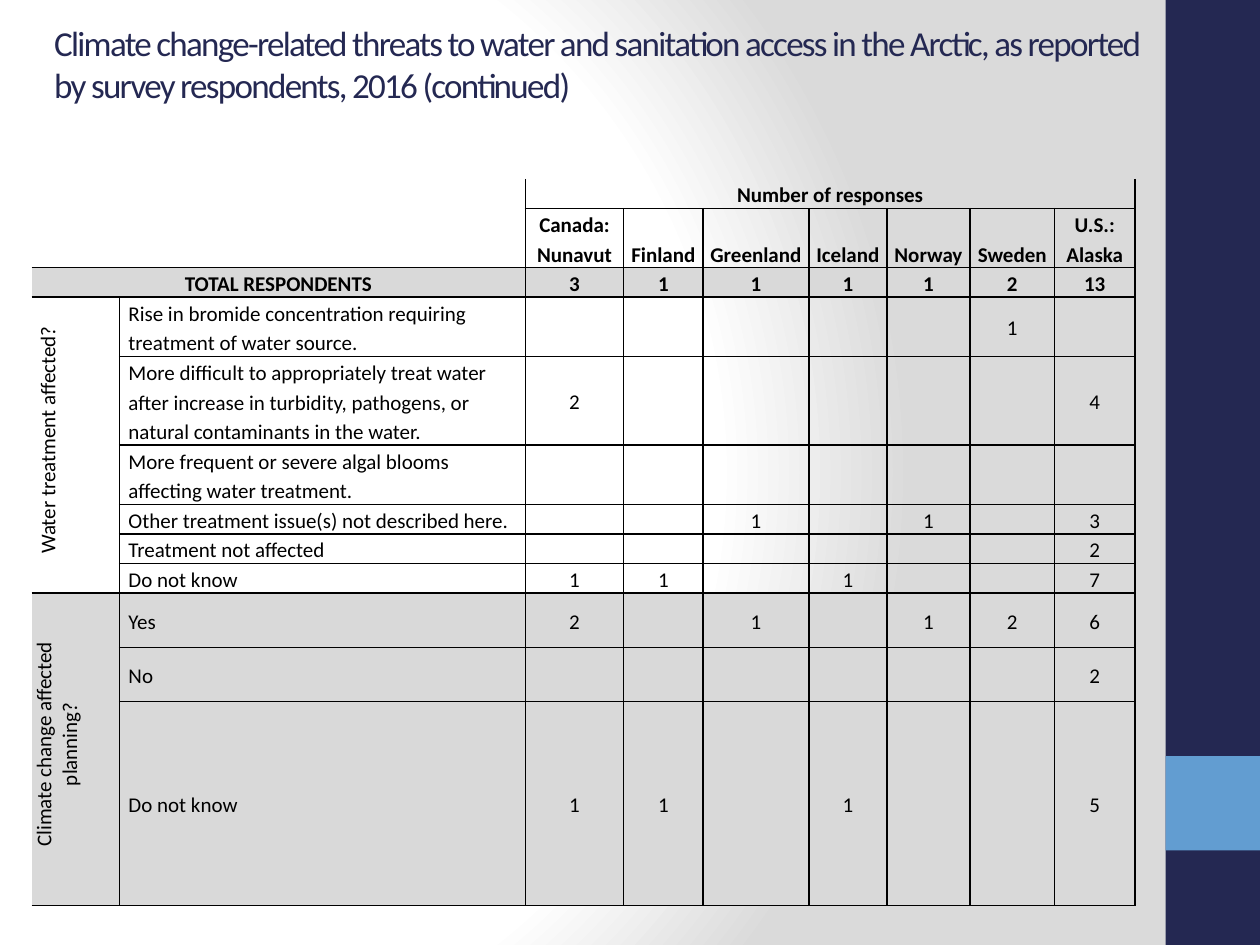
from lxml import etree
from pptx import Presentation
from pptx.dml.color import RGBColor
from pptx.enum.shapes import MSO_SHAPE
from pptx.enum.text import MSO_ANCHOR, PP_ALIGN
from pptx.oxml import parse_xml
from pptx.oxml.ns import nsdecls, qn
from pptx.util import Inches, Pt

NAVY, BLUE, GREY, BLACK = "242852", "629DD1", "D9D9D9", "000000"
FONT = "Calibri"
NO_STYLE = "{2D5ABB26-0587-4C30-8999-92F81FD0307C}"

TITLE = ("Climate change-related threats to water and sanitation access in the Arctic, "
         "as reported by survey respondents, 2016 (continued)")
BANDS = [(0, 7.5, NAVY), (6, 0.75, BLUE)]  # top, height, colour

ROWS = [
    ["", "", "Number of responses", "", "", "", "", "", ""],
    ["", "", "Canada: Nunavut", "Finland", "Greenland", "Iceland", "Norway", "Sweden",
     "U.S.: Alaska"],
    ["TOTAL RESPONDENTS", "", "3", "1", "1", "1", "1", "2", "13"],
    ["Water treatment affected?",
     "Rise in bromide concentration requiring treatment of water source.",
     "", "", "", "", "", "1", ""],
    ["", "More difficult to appropriately treat water after increase in turbidity, "
     "pathogens, or natural contaminants in the water.", "2", "", "", "", "", "", "4"],
    ["", "More frequent or severe algal blooms affecting water treatment.",
     "", "", "", "", "", "", ""],
    ["", "Other treatment issue(s) not described here.", "", "", "1", "", "1", "", "3"],
    ["", "Treatment not affected", "", "", "", "", "", "", "2"],
    ["", "Do not know", "1", "1", "", "1", "", "", "7"],
    ["Climate change affected planning?", "Yes", "2", "", "1", "", "1", "2", "6"],
    ["", "No", "", "", "", "", "", "", "2"],
    ["", "Do not know", "1", "1", "", "1", "", "", "5"],
]
COL_WIDTHS = [0.7, 3.22, 0.78, 0.63, 0.84, 0.62, 0.66, 0.67, 0.64]
LINE = 0.235  # height of one line of table text
ROW_HEIGHTS = [LINE * n for n in (1, 2, 1, 2, 3, 2, 1, 1, 1)] + [0.43, 0.43, 1.62]
MERGES = [(0, 0, 1, 1), (0, 2, 0, 8), (2, 0, 2, 1), (3, 0, 8, 0), (9, 0, 11, 0)]
TOTAL_ROW, WATER_ROW, PLAN_ROW = 2, 3, 9


def rgb(color):
    return RGBColor.from_string(color)


def set_background(slide):
    slide._element.cSld.insert(0, parse_xml(
        f'<p:bg {nsdecls("p", "a")}><p:bgPr><a:gradFill rotWithShape="1"><a:gsLst>'
        '<a:gs pos="0"><a:srgbClr val="FFFFFF"/></a:gs>'
        '<a:gs pos="75000"><a:srgbClr val="FFFFFF"/></a:gs>'
        '<a:gs pos="100000"><a:srgbClr val="DADADA"/></a:gs></a:gsLst>'
        '<a:path path="circle"><a:fillToRect l="20000" t="50000" r="100000" b="50000"/>'
        '</a:path></a:gradFill><a:effectLst/></p:bgPr></p:bg>'))


def format_run(r, size, color, bold=False):
    r.font.name, r.font.size, r.font.bold = FONT, Pt(size), bold
    r.font.color.rgb = rgb(color)


def add_borders(cell, row, col):
    """Rule every side except the outer left and top of the table."""
    sides = ["L"] * (col > 0) + ["R"] + ["T"] * (row > 0) + ["B"]
    for side in sides:
        cell._tc.get_or_add_tcPr().append(parse_xml(
            f'<a:ln{side} {nsdecls("a")} w="12700"><a:solidFill>'
            f'<a:srgbClr val="{BLACK}"/></a:solidFill></a:ln{side}>'))


def format_cell(cell, row, col, text):
    side_label = col == 0 and row >= WATER_ROW
    body_label = col == 1 and row >= WATER_ROW
    low = row < WATER_ROW or (body_label and row < PLAN_ROW)
    cell.margin_left = cell.margin_right = Inches(0.04 if row < WATER_ROW else 0.07)
    cell.margin_top = cell.margin_bottom = 0
    cell.vertical_anchor = MSO_ANCHOR.BOTTOM if low else MSO_ANCHOR.MIDDLE
    if not cell.is_spanned:
        add_borders(cell, row, col)
    if row == TOTAL_ROW or row >= PLAN_ROW:
        cell.fill.solid()
        cell.fill.fore_color.rgb = rgb(GREY)

    cell.text_frame.text = text
    p = cell.text_frame.paragraphs[0]
    p.alignment = PP_ALIGN.LEFT if body_label else PP_ALIGN.CENTER
    if not (side_label and row >= PLAN_ROW):
        p.line_spacing = 1.15
    if side_label:
        cell._tc.get_or_add_tcPr().set("vert", "vert270")
        p._p.get_or_add_pPr().set("marL", str(Inches(0.08)))
    for r in p.runs:
        format_run(r, 12, BLACK, bold=row < WATER_ROW)
    if not text:  # keeps empty cells from stretching their row
        etree.SubElement(p._p, qn("a:endParaRPr"), sz="1200")


def add_response_table(slide):
    frame = slide.shapes.add_table(len(ROWS), len(COL_WIDTHS), Inches(0.25), Inches(1.42),
                                   Inches(sum(COL_WIDTHS)), Inches(sum(ROW_HEIGHTS)))
    table = frame.table
    table.first_row = table.horz_banding = False
    table._tbl.tblPr.find(qn("a:tableStyleId")).text = NO_STYLE
    for column, width in zip(table.columns, COL_WIDTHS):
        column.width = Inches(width)
    for row, height in zip(table.rows, ROW_HEIGHTS):
        row.height = Inches(height)
    for top, left, bottom, right in MERGES:
        table.cell(top, left).merge(table.cell(bottom, right))
    for i, texts in enumerate(ROWS):
        for j, text in enumerate(texts):
            format_cell(table.cell(i, j), i, j, text)


def add_title(slide):
    title = slide.shapes.title
    title.left, title.top = Inches(0.33), Inches(0)
    title.width, title.height = Inches(9), Inches(1)
    tf = title.text_frame
    tf.text = TITLE
    tf.word_wrap = True
    tf.vertical_anchor = MSO_ANCHOR.MIDDLE
    p = tf.paragraphs[0]
    p.alignment = PP_ALIGN.LEFT
    format_run(p.runs[0], 20, NAVY)
    p.runs[0].font._element.set("spc", "-100")
    slide.shapes._spTree.append(title._element)  # bring to front


def main():
    prs = Presentation()
    prs.slide_width, prs.slide_height = Inches(10), Inches(7.5)
    s = prs.slides.add_slide(prs.slide_layouts[5])
    set_background(s)
    for top, height, color in BANDS:
        sp = s.shapes.add_shape(MSO_SHAPE.RECTANGLE, Inches(9.25), Inches(top),
                                Inches(0.75), Inches(height))
        sp.shadow.inherit = False
        sp.fill.solid()
        sp.fill.fore_color.rgb = rgb(color)
        sp.line.fill.background()
    add_response_table(s)
    add_title(s)
    prs.save("out.pptx")


if __name__ == "__main__":
    main()
